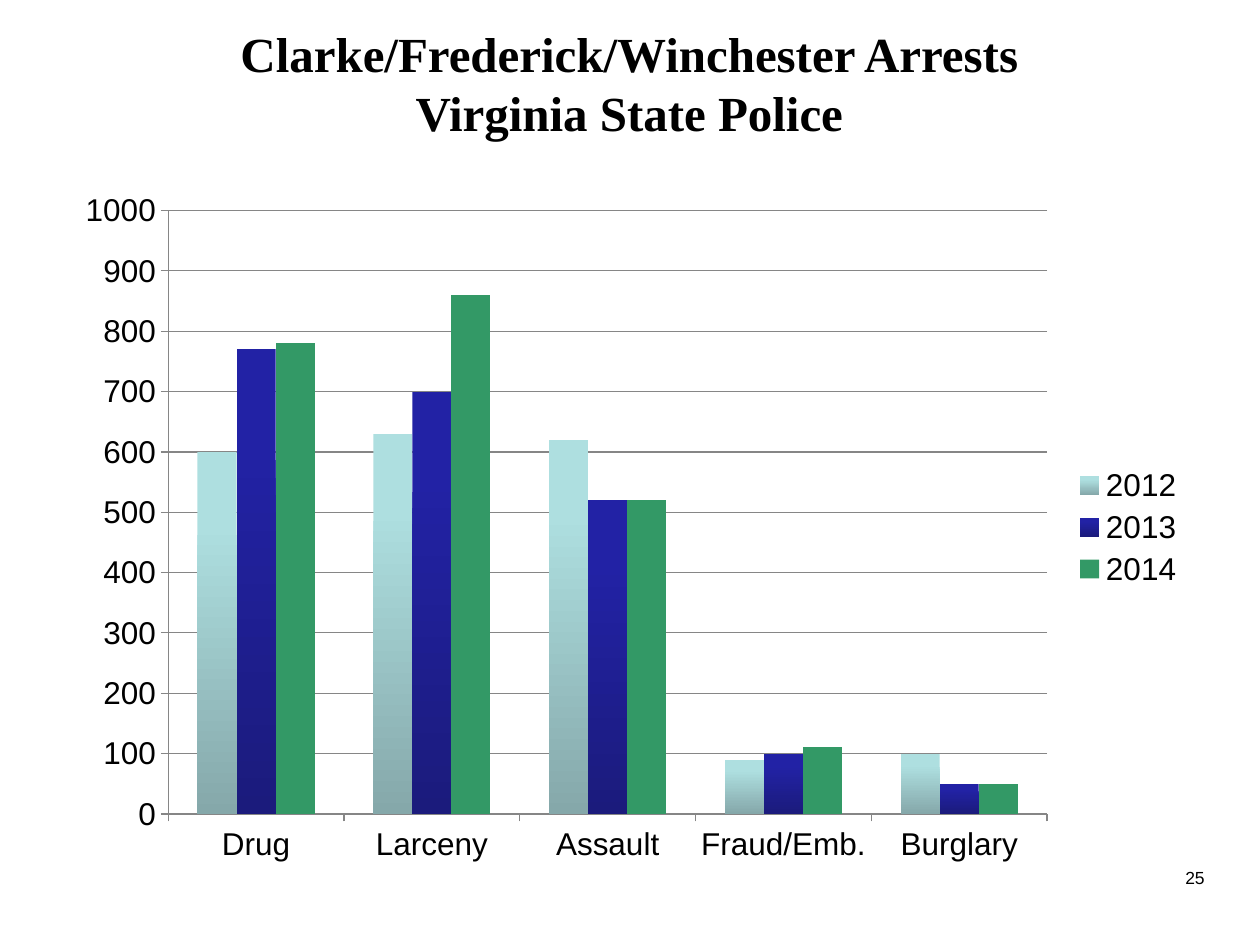
from pptx import Presentation
from pptx.chart.data import CategoryChartData
from pptx.dml.color import RGBColor
from pptx.enum import chart as ch, text
from pptx.util import Inches, Pt

TITLE = "Clarke/Frederick/Winchester Arrests\vVirginia State Police"
PAGE = "25"
CATEGORIES = ["Drug", "Larceny", "Assault", "Fraud/Emb.", "Burglary"]
# year, arrests per category, fill colours from top to bottom
SERIES = [
    ("2012", [600, 630, 620, 90, 100], ["AEDFE0", "85A8AA"]),
    ("2013", [770, 700, 520, 100, 50], ["2222A5", "1B1B7C"]),
    ("2014", [780, 860, 520, 110, 50], ["339966"]),
]
BLACK, GRAY = "000000", "868686"


def rgb(value):
    return RGBColor.from_string(value)


def style_font(font, size, name="Arial", bold=False):
    font.size, font.name, font.bold = Pt(size), name, bold
    font.color.rgb = rgb(BLACK)


def write(sp, content, align, anchor, **font):
    tf = sp.text_frame
    tf.word_wrap = True
    tf.auto_size = text.MSO_AUTO_SIZE.NONE
    tf.vertical_anchor = anchor
    p = tf.paragraphs[0]
    p.text = content
    p.alignment = align
    for r in p.runs:
        style_font(r.font, **font)


def paint(fill, colors):
    """Fill with one solid colour, or with a gradient running downwards."""
    if len(colors) == 1:
        fill.solid()
        fill.fore_color.rgb = rgb(colors[0])
        return
    fill.gradient()
    fill.gradient_angle = 270
    for stop, color, position in zip(fill.gradient_stops, colors, (0.2, 1)):
        stop.color.rgb = rgb(color)
        stop.position = position


def add_arrests_chart(s):
    data = CategoryChartData()
    data.categories = CATEGORIES
    for year, values, _ in SERIES:
        data.add_series(year, values)
    chart = s.shapes.add_chart(
        ch.XL_CHART_TYPE.COLUMN_CLUSTERED,
        Inches(0.5), Inches(1.42), Inches(9), Inches(5.53), data).chart
    style_font(chart.font, 18)
    chart.has_title = False
    chart.has_legend = True
    chart.legend.position = ch.XL_LEGEND_POSITION.RIGHT
    chart.legend.include_in_layout = False

    plot = chart.plots[0]
    plot.gap_width, plot.overlap = 150, 0
    plot.vary_by_categories = False
    for series, (_, _, colors) in zip(plot.series, SERIES):
        paint(series.format.fill, colors)

    value_axis = chart.value_axis
    value_axis.minimum_scale, value_axis.maximum_scale = 0, 1000
    value_axis.major_unit = 100
    value_axis.has_major_gridlines = True
    for axis in (value_axis, chart.category_axis):
        axis.major_tick_mark = ch.XL_TICK_MARK.OUTSIDE
    for part in (value_axis, chart.category_axis, value_axis.major_gridlines):
        part.format.line.color.rgb = rgb(GRAY)
        part.format.line.width = Pt(0.75)


prs = Presentation()
prs.slide_width, prs.slide_height = Inches(10), Inches(7.5)
s = prs.slides.add_slide(prs.slide_layouts[5])

title = s.shapes.title
title.left, title.top = Inches(0.33), Inches(0.03)
title.width, title.height = Inches(9.33), Inches(1.25)
write(title, TITLE, text.PP_ALIGN.CENTER, text.MSO_ANCHOR.MIDDLE,
      size=28, name="Times New Roman", bold=True)

add_arrests_chart(s)

page = s.shapes.add_textbox(Inches(7.33), Inches(6.83), Inches(2.33), Inches(0.52))
write(page, PAGE, text.PP_ALIGN.RIGHT, text.MSO_ANCHOR.TOP, size=10)

prs.save("out.pptx")
